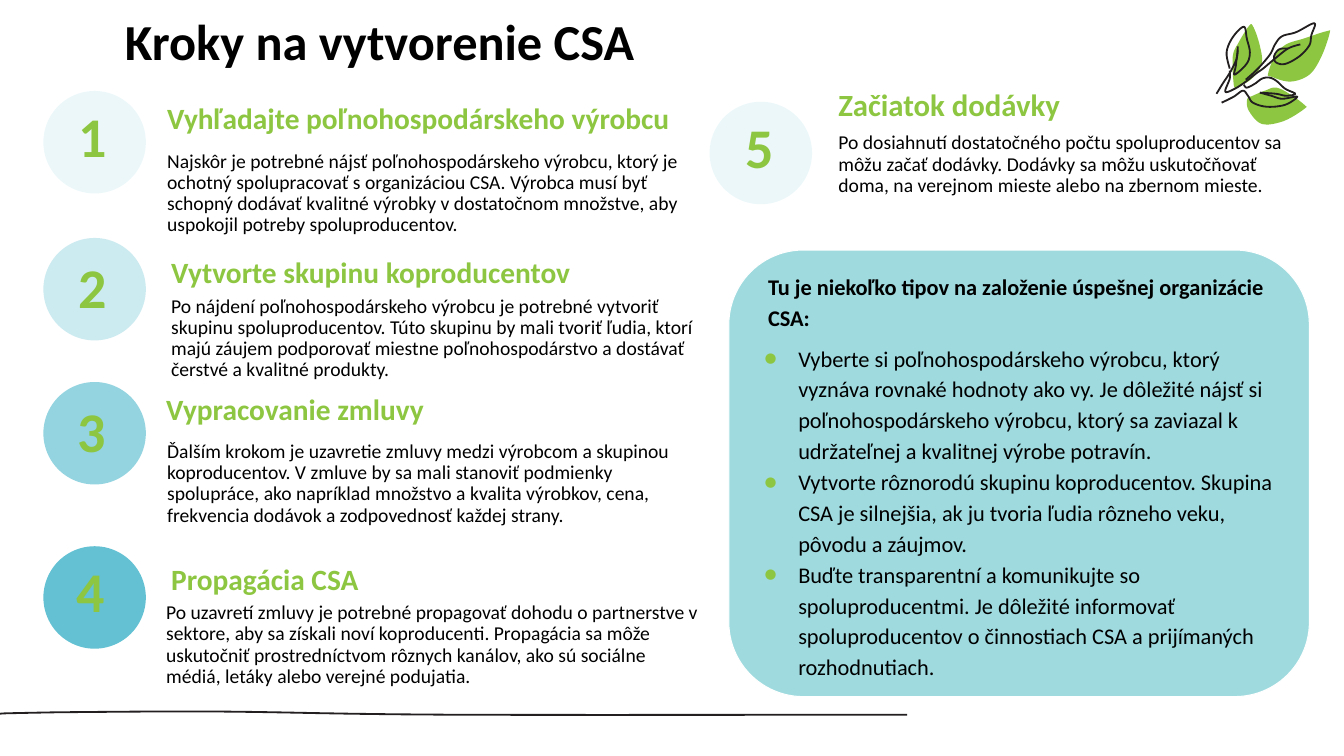
from dataclasses import dataclass

from lxml.etree import SubElement
from pptx import Presentation
from pptx.dml.color import RGBColor
from pptx.enum.shapes import MSO_SHAPE
from pptx.enum.text import MSO_ANCHOR, MSO_AUTO_SIZE, PP_ALIGN
from pptx.oxml.ns import qn
from pptx.util import Pt

GREEN = RGBColor(0x8D, 0xC6, 0x41)
TEAL = RGBColor(0x63, 0xC1, 0xD3)
PALE_TEAL = RGBColor(0x9F, 0xDA, 0xDF)
INK = RGBColor(0x23, 0x1F, 0x20)
BLACK = RGBColor(0, 0, 0)
WHITE = RGBColor(0xFF, 0xFF, 0xFF)

CIRCLE_SIZE = 73.2
SPRIG_LEFT = 864


@dataclass
class Step:
    """One numbered step; positions are (left, top) in points."""
    circle: tuple
    opacity: int
    number_at: tuple
    heading_at: tuple
    heading: str
    text_at: tuple
    text_width: float
    text: str
    heading_size: int = 21


STEPS = [
    Step((31, 65), 12, (49, 65.5), (112.3, 70.6), "Vyhľadajte poľnohospodárskeho výrobcu",
         (112.3, 104.4), 382.3,
         "Najskôr je potrebné nájsť poľnohospodárskeho výrobcu, ktorý je ochotný spolupracovať "
         "s organizáciou CSA. Výrobca musí byť schopný dodávať kvalitné výrobky v dostatočnom "
         "množstve, aby uspokojil potreby spoluproducentov."),
    Step((31, 170), 32, (49, 173.5), (115.2, 180.7), "Vytvorte skupinu koproducentov",
         (115.2, 208.1), 396,
         "Po nájdení poľnohospodárskeho výrobcu je potrebné vytvoriť skupinu spoluproducentov. "
         "Túto skupinu by mali tvoriť ľudia, ktorí majú záujem podporovať miestne "
         "poľnohospodárstvo a dostávať čerstvé a kvalitné produkty."),
    Step((31, 272.9), 69, (48.2, 275.8), (111.6, 278.6), "Vypracovanie zmluvy",
         (112.3, 311.8), 398.9,
         "Ďalším krokom je uzavretie zmluvy medzi výrobcom a skupinou koproducentov. V zmluve by "
         "sa mali stanoviť podmienky spolupráce, ako napríklad množstvo a kvalita výrobkov, cena, "
         "frekvencia dodávok a zodpovednosť každej strany."),
    Step((31, 390.2), 100, (47.5, 390.2), (115.2, 400.3), "Propagácia CSA",
         (111.6, 427), 398.9,
         "Po uzavretí zmluvy je potrebné propagovať dohodu o partnerstve v sektore, aby sa získali "
         "noví koproducenti. Propagácia sa môže uskutočniť prostredníctvom rôznych kanálov, ako sú "
         "sociálne médiá, letáky alebo verejné podujatia."),
    Step((506.9, 72.7), 12, (525.6, 73.4), (591.8, 60.5), "Začiatok dodávky",
         (591.8, 91.4), 331.9,
         "Po dosiahnutí dostatočného počtu spoluproducentov sa môžu začať dodávky. Dodávky sa môžu "
         "uskutočňovať doma, na verejnom mieste alebo na zbernom mieste.", 22),
]

TIPS_INTRO = "Tu je niekoľko tipov na založenie úspešnej organizácie CSA:"
TIPS = [
    "Vyberte si poľnohospodárskeho výrobcu, ktorý vyznáva rovnaké hodnoty ako vy. Je dôležité "
    "nájsť si poľnohospodárskeho výrobcu, ktorý sa zaviazal k udržateľnej a kvalitnej výrobe "
    "potravín.",
    "Vytvorte rôznorodú skupinu koproducentov. Skupina CSA je silnejšia, ak ju tvoria ľudia "
    "rôzneho veku, pôvodu a záujmov.",
    "Buďte transparentní a komunikujte so spoluproducentmi. Je dôležité informovať "
    "spoluproducentov o činnostiach CSA a prijímaných rozhodnutiach.",
]

GROUND = [(0, 509.8), (10, 509.4), (60, 508.6), (161, 508.3), (319, 510.5), (648, 510.5)]
LEAVES = [
    [(21.6, 61.9), (31.5, 55), (37.4, 44.6), (35.5, 31), (31, 18.7), (28.1, 18.7), (20.9, 30.2),
     (16.6, 40.3), (17.3, 60.5), (19.4, 62.6)],
    [(71.3, 53.3), (79.9, 40.3), (85.7, 23.8), (83.5, 22.3), (67.7, 27.4), (54.7, 31.7),
     (46.8, 39.6), (41.8, 52.6), (43.9, 54.7), (57.6, 58.3)],
    [(67.7, 77.8), (67.7, 74.9), (56.9, 67), (47.5, 62.6), (39.6, 64.8), (31, 68.4), (26.9, 71),
     (28.1, 79.2), (37.4, 88.6), (53, 86.5)],
]
STROKES = [
    [(5, 67), (9.4, 59.8), (13.7, 53.3), (15.8, 49.7), (19.4, 41.8), (20.2, 33.1)],
    [(14.4, 49), (12.2, 37.4), (16.6, 26.6), (24.5, 19.1), (26.6, 27.4), (28.8, 37.4),
     (26.6, 45.4), (18, 53.3), (18.7, 47.5), (20.2, 36)],
    [(14.4, 50.4), (14.4, 56.2), (11.2, 65.5), (18, 63.4), (25.9, 58.3), (33.1, 52.6),
     (38.2, 49), (46.8, 41.8), (56.2, 34.6), (64.8, 31.7)],
    [(25.9, 56.9), (34.6, 49), (43.2, 38.9), (46.8, 31.7), (51.8, 25.9), (61.9, 23),
     (74.9, 16.6), (72.7, 25.2), (71.3, 32.4), (64.1, 40.3), (54, 45.7), (47.5, 44.6),
     (46.1, 40.3), (49.7, 35.3), (56.2, 34.6)],
    [(24.5, 60.5), (26.6, 62.6), (32.4, 59.8), (37.4, 56.2), (42.5, 55.4), (47.5, 57.6),
     (54, 63.4), (61.2, 67), (54.7, 68.4), (47.5, 67), (36, 66.2)],
    [(8.6, 73.4), (17.3, 69.1), (23.8, 64.8), (27.4, 68.4), (31, 73.4), (41, 76.3), (54, 74.9),
     (62.6, 69.1), (51.8, 70.6), (43.9, 68.4), (36, 66.2)],
]


def smooth(points, closed, pieces=6):
    """Return points on a Catmull-Rom curve through the given points."""
    ring = [points[-1], *points, *points[:2]] if closed else [points[0], *points, points[-1]]
    curve = []
    for quad in zip(ring, ring[1:], ring[2:], ring[3:]):
        for piece in range(pieces):
            t = piece / pieces
            curve.append(tuple(
                b + t * (c - a) / 2 + t ** 2 * (2 * a - 5 * b + 4 * c - d) / 2
                + t ** 3 * (3 * b - a - 3 * c + d) / 2 for a, b, c, d in zip(*quad)))
    return curve if closed else curve + [points[-1]]


class SlideBuilder:
    def __init__(self, slide, font_name):
        self.slide = slide
        self.font_name = font_name

    def place(self, shape, left, top, width, height):
        shape.left, shape.top, shape.width, shape.height = map(Pt, (left, top, width, height))

    def frame(self, shape, vertical_inset):
        frame = shape.text_frame
        frame.word_wrap = True
        frame.auto_size = MSO_AUTO_SIZE.NONE
        frame.vertical_anchor = MSO_ANCHOR.TOP
        frame.margin_left = frame.margin_right = Pt(7.2)
        frame.margin_top = frame.margin_bottom = Pt(vertical_inset)
        return frame

    def fill_paragraph(self, paragraph, text, size, color=BLACK, bold=False, spacing=1.0,
                       before=0):
        paragraph.text = text
        paragraph.alignment = PP_ALIGN.LEFT
        paragraph.line_spacing = spacing
        paragraph.space_before = Pt(before)
        font = paragraph.font
        font.name, font.size, font.bold = self.font_name, Pt(size), bold
        font.color.rgb = color

    def title(self, text, box):
        shape = self.slide.shapes.title
        self.place(shape, *box)
        self.fill_paragraph(self.frame(shape, 7.2).paragraphs[0], text, 36, bold=True)

    def text(self, text, box, size, inset=3.6, **style):
        shape = self.slide.shapes.add_textbox(*map(Pt, box))
        self.fill_paragraph(self.frame(shape, inset).paragraphs[0], text, size, **style)

    def preset(self, kind, box, color, opacity=100):
        shape = self.slide.shapes.add_shape(kind, *map(Pt, box))
        shape.shadow.inherit = False
        shape.fill.solid()
        shape.fill.fore_color.rgb = color
        shape.line.fill.background()
        if opacity < 100:
            rgb = shape.element.spPr.find(".//" + qn("a:srgbClr"))
            SubElement(rgb, qn("a:alpha"), val=str(opacity * 1000))
        return shape

    def curve(self, points, color, closed=False, left=0):
        """Draw a filled outline when closed, else a thin stroke."""
        start, *rest = [(Pt(left + x), Pt(y)) for x, y in smooth(points, closed)]
        builder = self.slide.shapes.build_freeform(*start)
        builder.add_line_segments(rest, close=closed)
        shape = builder.convert_to_shape()
        shape.shadow.inherit = False
        if closed:
            shape.fill.solid()
            shape.fill.fore_color.rgb = color
            shape.line.fill.background()
        else:
            shape.fill.background()
            shape.line.color.rgb = color
            shape.line.width = Pt(1.3)

    def step(self, number, step):
        self.preset(MSO_SHAPE.OVAL, (*step.circle, CIRCLE_SIZE, CIRCLE_SIZE), TEAL, step.opacity)
        self.text(str(number), (*step.number_at, 50.4, 73.4), 40, 7.2, color=GREEN, bold=True)
        self.text(step.heading, (*step.heading_at, 412.6, 26.6), step.heading_size,
                  color=GREEN, bold=True, spacing=0.9)
        self.text(step.text, (*step.text_at, step.text_width, 78.5), 14, spacing=0.9)

    def indent(self, paragraph, margin, first_line):
        properties = paragraph._p.get_or_add_pPr()
        properties.set("marL", str(Pt(margin)))
        properties.set("indent", str(Pt(first_line)))
        return properties

    def tips(self, intro, tips):
        panel = self.preset(MSO_SHAPE.ROUNDED_RECTANGLE, (520.6, 178.6, 414.7, 319), PALE_TEAL)
        panel.adjustments[0] = 0.167
        panel.line.color.rgb = WHITE
        panel.line.width = Pt(0.75)
        body = self.slide.placeholders[1]
        body.element.addprevious(panel.element)
        self.place(body, 527, 185, 405.4, 301)
        frame = self.frame(body, 7.2)
        first = frame.paragraphs[0]
        SubElement(self.indent(first, 14.4, 0), qn("a:buNone"))
        self.fill_paragraph(first, intro, 16, bold=True, spacing=1.15)
        for index, tip in enumerate(tips):
            paragraph = frame.add_paragraph()
            properties = self.indent(paragraph, 36, -24.5)
            SubElement(SubElement(properties, qn("a:buClr")), qn("a:srgbClr"), val=str(GREEN))
            SubElement(properties, qn("a:buFont"), typeface=self.font_name)
            SubElement(properties, qn("a:buChar"), char="●")
            self.fill_paragraph(paragraph, tip, 16, spacing=1.15, before=0 if index else 7)


def main():
    presentation = Presentation()
    presentation.slide_width, presentation.slide_height = Pt(960), Pt(540)
    slide = presentation.slides.add_slide(presentation.slide_layouts[1])
    builder = SlideBuilder(slide, "Calibri")
    builder.title("Kroky na vytvorenie CSA", (82, 0, 473, 41.8))
    builder.curve(GROUND, INK)
    builder.tips(TIPS_INTRO, TIPS)
    for number, step in enumerate(STEPS, 1):
        builder.step(number, step)
    for leaf in LEAVES:
        builder.curve(leaf, GREEN, closed=True, left=SPRIG_LEFT)
    for stroke in STROKES:
        builder.curve(stroke, INK, left=SPRIG_LEFT)
    presentation.save("out.pptx")


if __name__ == "__main__":
    main()
